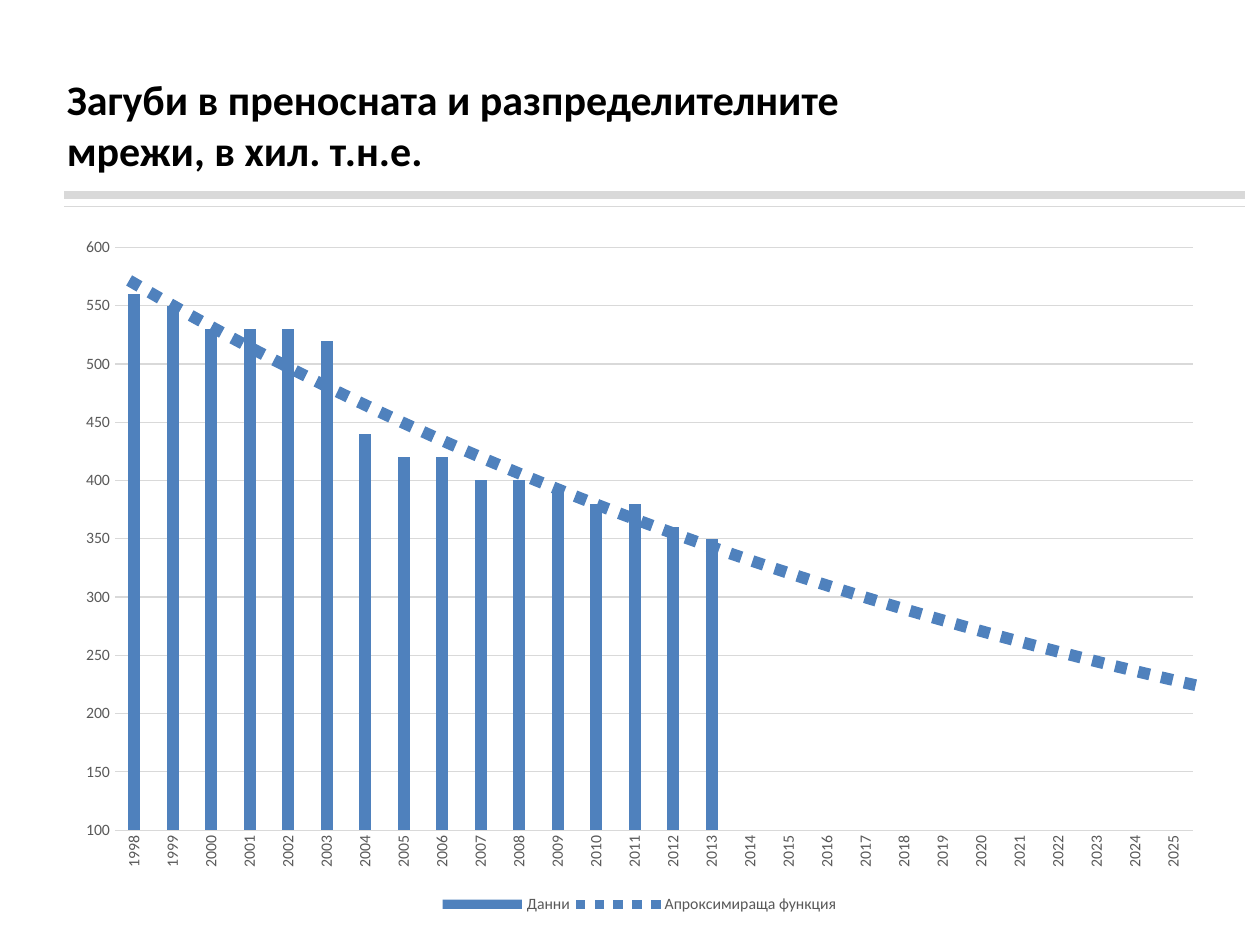
from lxml.etree import SubElement
from pptx import Presentation
from pptx.chart.data import CategoryChartData
from pptx.dml.color import RGBColor
from pptx.enum.chart import XL_CHART_TYPE, XL_LEGEND_POSITION, XL_TICK_MARK
from pptx.enum.shapes import MSO_CONNECTOR
from pptx.enum.text import MSO_ANCHOR, MSO_AUTO_SIZE, PP_ALIGN
from pptx.oxml import parse_xml
from pptx.oxml.ns import nsdecls, qn
from pptx.util import Inches, Pt

# Content
TITLE = "Загуби в преносната и разпределителните мрежи, в хил. т.н.е."
SERIES_NAME = "Данни"
TREND_NAME = "Апроксимираща функция"
YEARS = range(1998, 2026)
LOSSES = [560, 550, 530, 530, 530, 520, 440, 420,
          420, 400, 400, 390, 380, 380, 360, 350]
RULES = [(1.55, 4.5), (1.64, 0.25)]  # top in inches, width in points

FONT = "Calibri"
COLORS = {"title": "000000", "label": "595959", "rule": "D9D9D9", "bar": "4F81BD"}


def color(name):
    return RGBColor.from_string(COLORS[name])


def style_font(font, size, name, bold=False):
    font.name = FONT
    font.size = Pt(size)
    font.bold = bold
    font.color.rgb = color(name)


def style_line(line, name, width):
    line.color.rgb = color(name)
    line.width = Pt(width)


def add_rule(page, top, width):
    rule = page.shapes.add_connector(
        MSO_CONNECTOR.STRAIGHT, Inches(0.51), Inches(top), Inches(9.88), Inches(top))
    style_line(rule.line, "rule", width)
    SubElement(rule._element.spPr, qn("a:effectLst"))


def add_title(page):
    box = page.shapes.title
    box.left, box.top = Inches(0.43), Inches(0.36)
    box.width, box.height = Inches(6.78), Inches(1.25)
    frame = box.text_frame
    frame.word_wrap = True
    frame.auto_size = MSO_AUTO_SIZE.NONE
    frame.vertical_anchor = MSO_ANCHOR.MIDDLE
    para = frame.paragraphs[0]
    para.alignment = PP_ALIGN.LEFT
    span = para.add_run()
    span.text = TITLE
    style_font(span.font, 24, "title", bold=True)


def add_trend(series):
    """Exponential trend, carried to the right edge of the last year."""
    forward = len(YEARS) - len(LOSSES) + 0.5
    trend = parse_xml(
        f'<c:trendline {nsdecls("c", "a")}><c:name>{TREND_NAME}</c:name>'
        f'<c:spPr><a:ln w="{Pt(6.75)}" cap="sq"><a:solidFill>'
        f'<a:srgbClr val="{COLORS["bar"]}"/></a:solidFill>'
        '<a:prstDash val="sysDot"/></a:ln></c:spPr>'
        f'<c:trendlineType val="exp"/><c:forward val="{forward}"/>'
        '<c:dispRSqr val="0"/><c:dispEq val="0"/></c:trendline>')
    series._element.find(qn("c:cat")).addprevious(trend)


def add_losses_chart(page):
    data = CategoryChartData()
    data.categories = [str(year) for year in YEARS]
    data.add_series(SERIES_NAME, LOSSES + [None] * (len(YEARS) - len(LOSSES)))
    chart = page.shapes.add_chart(
        XL_CHART_TYPE.COLUMN_CLUSTERED, Inches(0.5), Inches(1.78),
        Inches(9.15), Inches(5.51), data).chart
    chart.has_title = False
    style_font(chart.font, 10, "title")

    # Columns
    plot = chart.plots[0]
    plot.vary_by_categories = False
    plot.gap_width, plot.overlap = 219, -27
    series = plot.series[0]
    series.format.fill.solid()
    series.format.fill.fore_color.rgb = color("bar")
    add_trend(series)

    # Axes, with the years reading upwards
    for axis in (chart.category_axis, chart.value_axis):
        axis.major_tick_mark = axis.minor_tick_mark = XL_TICK_MARK.NONE
        style_font(axis.tick_labels.font, 9, "label")
    years = chart.category_axis
    style_line(years.format.line, "rule", 0.75)
    label_body = years._element.find(qn("c:txPr")).find(qn("a:bodyPr"))
    label_body.set("rot", "-5400000")
    label_body.set("vert", "horz")
    values = chart.value_axis
    values.minimum_scale, values.maximum_scale, values.major_unit = 100, 600, 50
    values.format.line.fill.background()
    values.has_major_gridlines = True
    style_line(values.major_gridlines.format.line, "rule", 0.75)

    # Legend
    chart.has_legend = True
    chart.legend.position = XL_LEGEND_POSITION.BOTTOM
    chart.legend.include_in_layout = False
    style_font(chart.legend.font, 9, "label")


def main():
    deck = Presentation()
    deck.slide_width, deck.slide_height = Inches(10), Inches(7.5)
    page = deck.slides.add_slide(deck.slide_layouts[5])
    for top, width in RULES:
        add_rule(page, top, width)
    add_title(page)
    add_losses_chart(page)
    deck.save("out.pptx")


if __name__ == "__main__":
    main()
